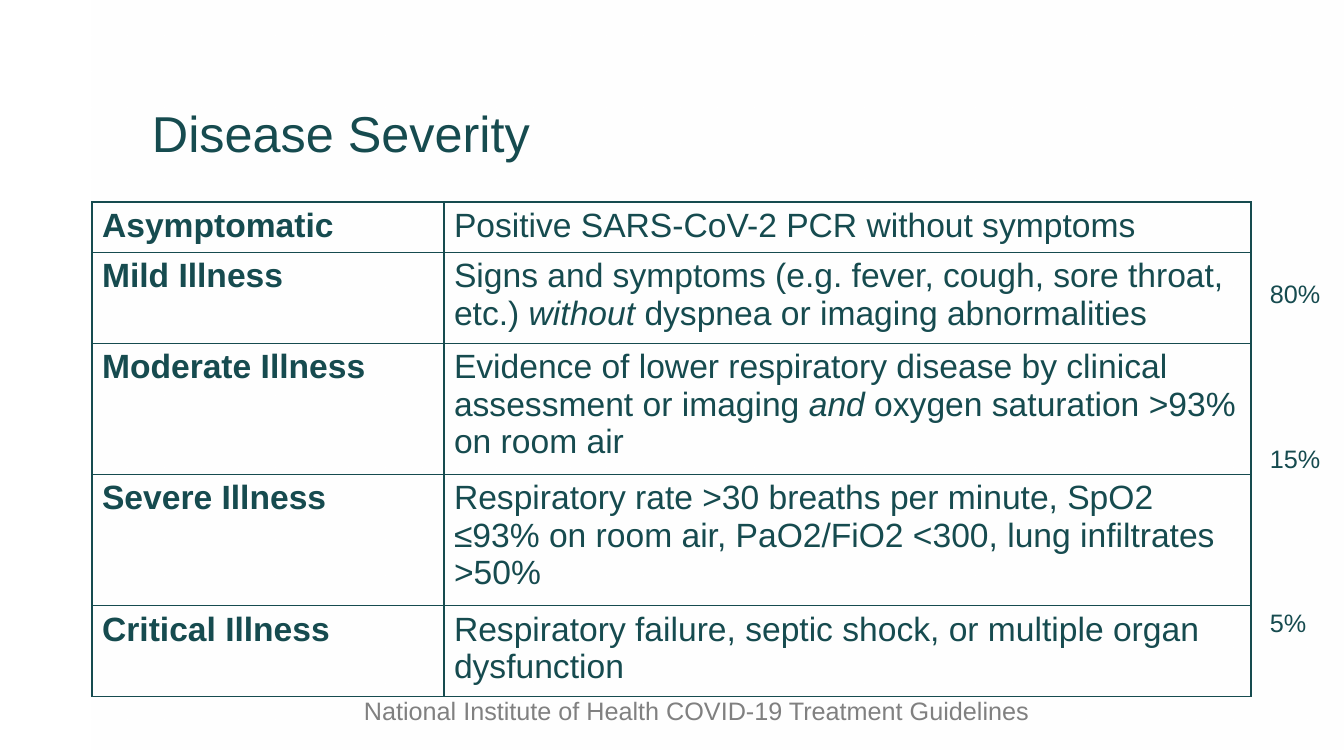
from lxml.etree import SubElement
from pptx import Presentation
from pptx.dml.color import RGBColor
from pptx.enum.shapes import MSO_SHAPE
from pptx.enum.text import MSO_ANCHOR
from pptx.oxml.ns import qn
from pptx.util import Pt

PX = 9144000 / 1008  # EMU per px
TEAL = RGBColor(0x16, 0x4B, 0x4F)
GRAY = RGBColor(0x80, 0x80, 0x80)
WHITE = RGBColor(0xFF, 0xFF, 0xFF)


def px(*lengths):
    return [round(length * PX) for length in lengths]


def write(frame, paragraphs, size, color=TEAL, bold=False, line=None, gap=0,
          anchor=MSO_ANCHOR.TOP, wrap=True):
    """Fill a frame; each paragraph is a list of runs, every second one italic."""
    frame.word_wrap = wrap
    frame.vertical_anchor = anchor
    for i, runs in enumerate(paragraphs):
        paragraph = frame.add_paragraph() if i else frame.paragraphs[0]
        if line:
            paragraph.line_spacing = line
        if i and gap:
            paragraph.space_before = Pt(gap)
        for j, text in enumerate(runs):
            run = paragraph.add_run()
            run.text = text
            font = run.font
            font.name, font.size, font.bold = "Arial", Pt(size), bold
            font.italic = j % 2 == 1
            font.color.rgb = color


deck = Presentation()
deck.slide_width, deck.slide_height = px(1344, 756)
slide = deck.slides.add_slide(deck.slide_layouts[6])
shapes = slide.shapes

# Translucent white panel
panel = shapes.add_shape(MSO_SHAPE.RECTANGLE, *px(92, 0, 1252, 756))
panel.shadow.inherit = False
panel.line.fill.background()
panel.fill.gradient()
panel.fill.gradient_angle = 270
for stop, alpha in zip(panel.fill.gradient_stops, (60000, 0)):
    stop.color.rgb = WHITE
for color, alpha in zip(panel.element.spPr.iter(qn("a:srgbClr")), (60000, 0)):
    SubElement(color, qn("a:alpha"), val=str(alpha))

# Title
title = shapes.add_textbox(*px(142, 42, 1058, 126))
write(title.text_frame, [["Disease Severity"]], 36, line=0.9,
      anchor=MSO_ANCHOR.BOTTOM)

# Severity table
LEVELS = [
    (50, "Asymptomatic", ["Positive SARS-CoV-2 PCR without symptoms"]),
    (91, "Mild Illness",
     ["Signs and symptoms (e.g. fever, cough, sore throat, etc.) ",
      "without ", "dyspnea or imaging abnormalities"]),
    (131, "Moderate Illness",
     ["Evidence of lower respiratory disease by clinical assessment or imaging ",
      "and", " oxygen saturation >93% on room air"]),
    (131, "Severe Illness",
     ["Respiratory rate >30 breaths per minute, SpO2 ≤93% on room air, "
      "PaO2/FiO2 <300, lung infiltrates >50%"]),
    (91, "Critical Illness",
     ["Respiratory failure, septic shock, or multiple organ dysfunction"]),
]
severity = shapes.add_table(len(LEVELS), 2, *px(92, 202, 1159, 494)).table
severity.first_row = severity.horz_banding = False
for column, width in zip(severity.columns, px(352, 807)):
    column.width = width
for row, (height, level, criteria) in zip(severity.rows, LEVELS):
    row.height, = px(height)
    for cell, runs, bold in zip(row.cells, ([level], criteria), (True, False)):
        write(cell.text_frame, [runs], 24, bold=bold)
        properties = cell._tc.get_or_add_tcPr()
        for side in ("lnL", "lnR", "lnT", "lnB"):
            border = SubElement(properties, qn(f"a:{side}"), w=str(Pt(1)))
            fill = SubElement(border, qn("a:solidFill"))
            SubElement(fill, qn("a:srgbClr"), val=str(TEAL))
        cell.fill.background()

# Citation under the table
citation = shapes.add_textbox(*px(354, 690, 691, 40))
write(citation.text_frame,
      [["National Institute of Health COVID-19 Treatment Guidelines"]],
      18, color=GRAY, wrap=False)

# Share of cases beside the rows
shares = shapes.add_textbox(*px(1260, 219, 84, 532))
shares.text_frame.margin_top, = px(63)
write(shares.text_frame, [["80%"], ["15%"], ["5%"]], 18, line=0.9, gap=98)

deck.save("out.pptx")
